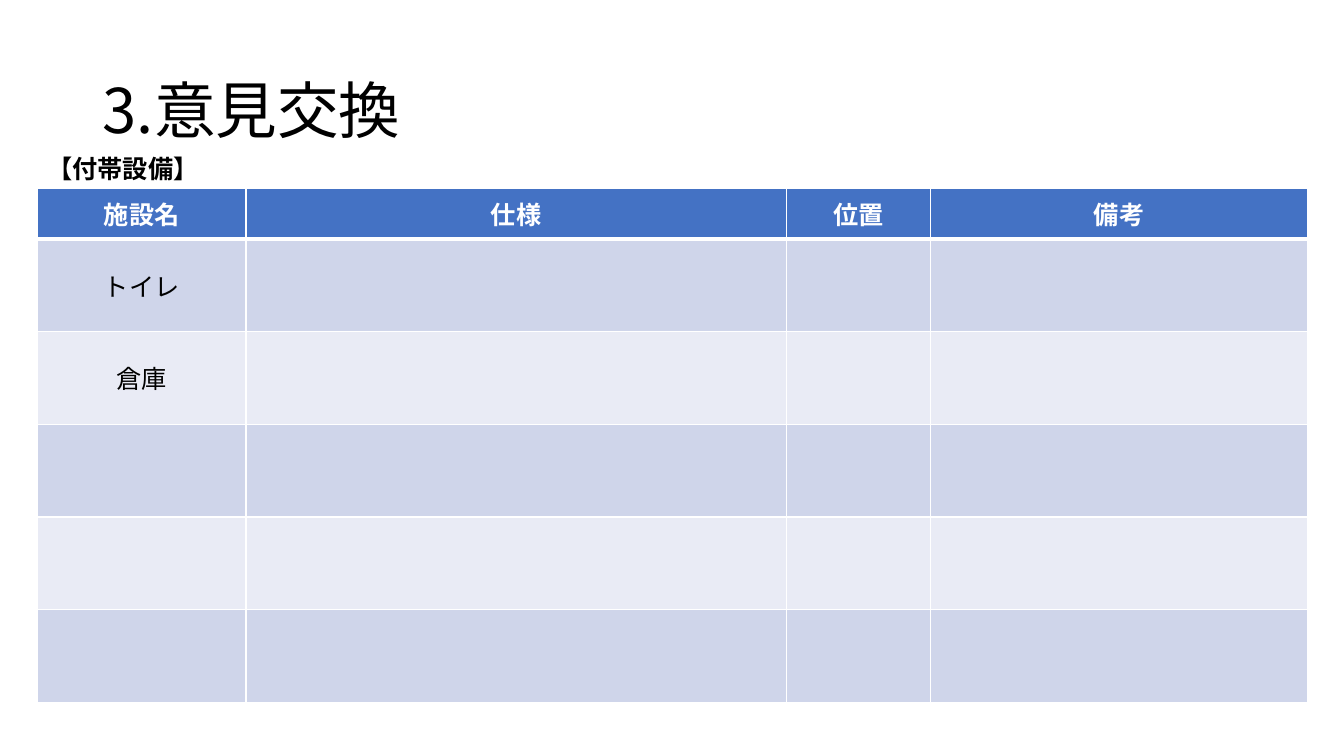
import pptx
import pptx.util
import pptx.dml.color
import pptx.enum.lang
import pptx.enum.text
import pptx.oxml.ns
import lxml.etree

theme = {
    "font": "Noto Sans CJK JP",
    "title": 44, "body": 18,
    "ink": "000000", "paper": "FFFFFF",
    "header": "4472C4", "bands": ["CFD5EA", "E9EBF5"],
    "thin": 1, "thick": 3,
}
Inches = pptx.util.Inches
color = pptx.dml.color.RGBColor.from_string
anchor = pptx.enum.text.MSO_ANCHOR
align = pptx.enum.text.PP_ALIGN
qn = pptx.oxml.ns.qn


def write(frame, text, size=theme["body"], ink=theme["ink"], bold=False,
          alignment=align.LEFT, spacing=1.0):
    frame.word_wrap = True
    para = frame.paragraphs[0]
    para.alignment = alignment
    para.line_spacing = spacing
    span = para.add_run()
    span.text = text
    span.font.name = theme["font"]
    span.font.size = pptx.util.Pt(size)
    span.font.bold = bold
    span.font.color.rgb = color(ink)
    span.font.language_id = pptx.enum.lang.MSO_LANGUAGE_ID.JAPANESE
    latin = span.font._element.find(qn("a:latin"))
    east_asian = lxml.etree.Element(qn("a:ea"), typeface=theme["font"])
    latin.addnext(east_asian)


def add_border(cell, side, width):
    line = lxml.etree.SubElement(cell._tc.get_or_add_tcPr(), qn("a:" + side),
                                 w=str(pptx.util.Pt(width)))
    fill = lxml.etree.SubElement(line, qn("a:solidFill"))
    lxml.etree.SubElement(fill, qn("a:srgbClr"), val=theme["paper"])


deck = pptx.Presentation()
deck.slide_width = Inches(13.33)
deck.slide_height = Inches(7.5)
page = deck.slides.add_slide(deck.slide_layouts[6])

# Title
title = page.shapes.add_textbox(Inches(0.92), Inches(0.4), Inches(11.5), Inches(1.45))
title.text_frame.vertical_anchor = anchor.MIDDLE
write(title.text_frame, "3.意見交換", size=theme["title"], spacing=0.9)

# Facilities table
headings = ["施設名", "仕様", "位置", "備考"]
facilities = ["トイレ", "倉庫", "", "", ""]
rows = [headings] + [[name, "", "", ""] for name in facilities]
column_widths = [2.07, 5.36, 1.43, 3.74]
row_heights = [0.5] + [0.92] * len(facilities)
left, top = 0.37, 1.87
table = page.shapes.add_table(
    len(rows), len(headings), Inches(left), Inches(top),
    Inches(sum(column_widths)), Inches(sum(row_heights))).table
table.first_row = False
table.horz_banding = False
for column, width in zip(table.columns, column_widths):
    column.width = Inches(width)
for row, height in zip(table.rows, row_heights):
    row.height = Inches(height)

for r, texts in enumerate(rows):
    is_header = r == 0
    for c, text in enumerate(texts):
        cell = table.cell(r, c)
        cell.vertical_anchor = anchor.MIDDLE
        for side in ("lnL", "lnR", "lnT", "lnB"):
            under_header = (r, side) in [(0, "lnB"), (1, "lnT")]
            add_border(cell, side, theme["thick"] if under_header else theme["thin"])
        cell.fill.solid()
        cell.fill.fore_color.rgb = color(
            theme["header"] if is_header else theme["bands"][(r - 1) % 2])
        if text:
            write(cell.text_frame, text, bold=is_header, alignment=align.CENTER,
                  ink=theme["paper"] if is_header else theme["ink"])

# Table caption
caption = page.shapes.add_textbox(Inches(left), Inches(top - 0.4), Inches(6.67), Inches(0.4))
write(caption.text_frame, "【付帯設備】", bold=True)

deck.save("out.pptx")
